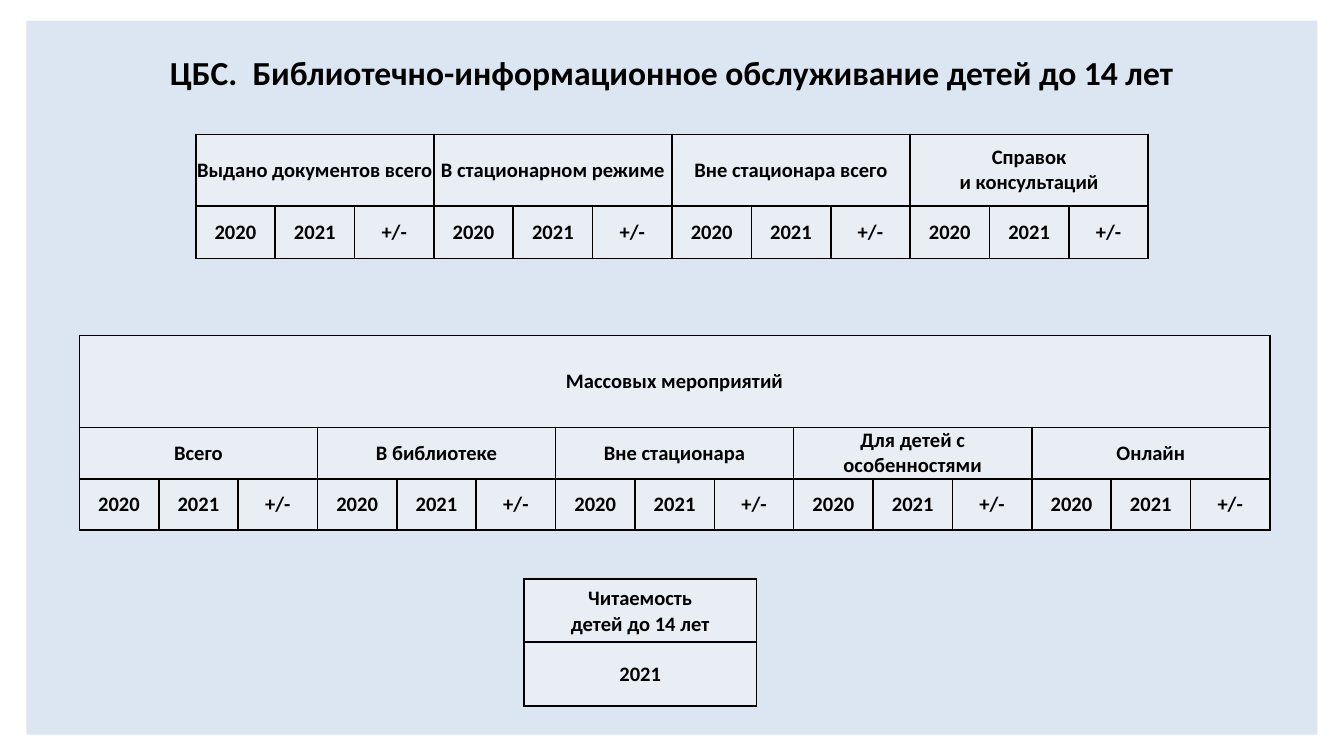
from dataclasses import dataclass

from lxml import etree
from pptx import Presentation
from pptx.dml.color import RGBColor
from pptx.enum.shapes import MSO_SHAPE
from pptx.enum.text import MSO_ANCHOR, PP_ALIGN
from pptx.oxml.ns import qn
from pptx.util import Cm, Pt

RECT = MSO_SHAPE.RECTANGLE
MIDDLE = MSO_ANCHOR.MIDDLE
CENTER = PP_ALIGN.CENTER

FONT = "Calibri"
BLACK = "000000"
PANEL = "DCE6F2"
CELL_FILL = "E9EDF4"
BORDER_TAGS = ("a:lnL", "a:lnR", "a:lnT", "a:lnB")
YEARS = ["2020", "2021", "+/-"]


@dataclass
class Grid:
    """A table whose cells in each row share the full width equally."""
    left: float
    top: float
    col_width: float
    cols: int
    heights: list[float]
    rows: list[list[str]]
    inset: float = 0


GRIDS = [
    Grid(9.9, 10.94, 4.4, 1, [1.2, 1.2],
         [["Читаемость\nдетей до 14 лет"], ["2021"]], inset=0.03),
    Grid(1.5, 6.34, 1.5, 15, [1.74, 0.97, 0.97],
         [["Массовых мероприятий"],
          ["Всего", "В библиотеке", "Вне стационара",
           "Для детей с особенностями", "Онлайн"],
          YEARS * 5]),
    Grid(3.7, 2.54, 1.5, 12, [1.35, 1],
         [["Выдано документов всего", "В стационарном режиме",
           "Вне стационара всего", "Справок\nи консультаций"],
          YEARS * 4]),
]


def color(value: str) -> RGBColor:
    return RGBColor.from_string(value)


def write(tf, text: str, size: float) -> None:
    """Set centred bold text, one paragraph per line."""
    tf.text = text
    for p in tf.paragraphs:
        p.alignment = CENTER
        p.font.name = FONT
        p.font.size = Pt(size)
        p.font.bold = True
        p.font.color.rgb = color(BLACK)


def add_borders(cell) -> None:
    tc_pr = cell._tc.get_or_add_tcPr()
    for i, tag in enumerate(BORDER_TAGS):
        ln = etree.Element(qn(tag), w=str(Pt(1)))
        fill = etree.SubElement(ln, qn("a:solidFill"))
        etree.SubElement(fill, qn("a:srgbClr"), val=BLACK)
        tc_pr.insert(i, ln)


def style_cell(cell, inset: float) -> None:
    cell.fill.solid()
    cell.fill.fore_color.rgb = color(CELL_FILL)
    cell.vertical_anchor = MIDDLE
    cell.margin_left = cell.margin_right = cell.margin_top = Cm(inset)
    cell.margin_bottom = 0
    add_borders(cell)


def add_grid(s, grid: Grid) -> None:
    table = s.shapes.add_table(
        len(grid.rows), grid.cols, Cm(grid.left), Cm(grid.top),
        Cm(grid.col_width * grid.cols), Cm(sum(grid.heights))).table
    table.first_row = table.horz_banding = False
    for column in table.columns:
        column.width = Cm(grid.col_width)
    for row, height in zip(table.rows, grid.heights):
        row.height = Cm(height)
    for cell in table.iter_cells():
        style_cell(cell, grid.inset)
    for r, texts in enumerate(grid.rows):
        span = grid.cols // len(texts)
        for i, text in enumerate(texts):
            cell = table.cell(r, i * span)
            if span > 1:
                cell.merge(table.cell(r, (i + 1) * span - 1))
            write(cell.text_frame, text, 11)


def add_panel(s) -> None:
    sp = s.shapes.add_shape(RECT, Cm(0.5), Cm(0.39), Cm(24.4), Cm(13.5))
    sp.shadow.inherit = False
    sp.fill.solid()
    sp.fill.fore_color.rgb = color(PANEL)
    sp.line.fill.background()


def add_title(s, text: str) -> None:
    tf = s.shapes.add_textbox(Cm(1.27), Cm(0.58), Cm(22.86), Cm(1.17)).text_frame
    tf.word_wrap = True
    tf.vertical_anchor = MIDDLE
    write(tf, text, 18)
    tf.paragraphs[0].line_spacing = 1.5


def main() -> None:
    prs = Presentation()
    prs.slide_width, prs.slide_height = Cm(25.4), Cm(14.29)
    s = prs.slides.add_slide(prs.slide_layouts[6])
    add_panel(s)
    add_title(s, "ЦБС.  Библиотечно-информационное обслуживание детей до 14 лет")
    for grid in GRIDS:
        add_grid(s, grid)
    prs.save("out.pptx")


if __name__ == "__main__":
    main()
